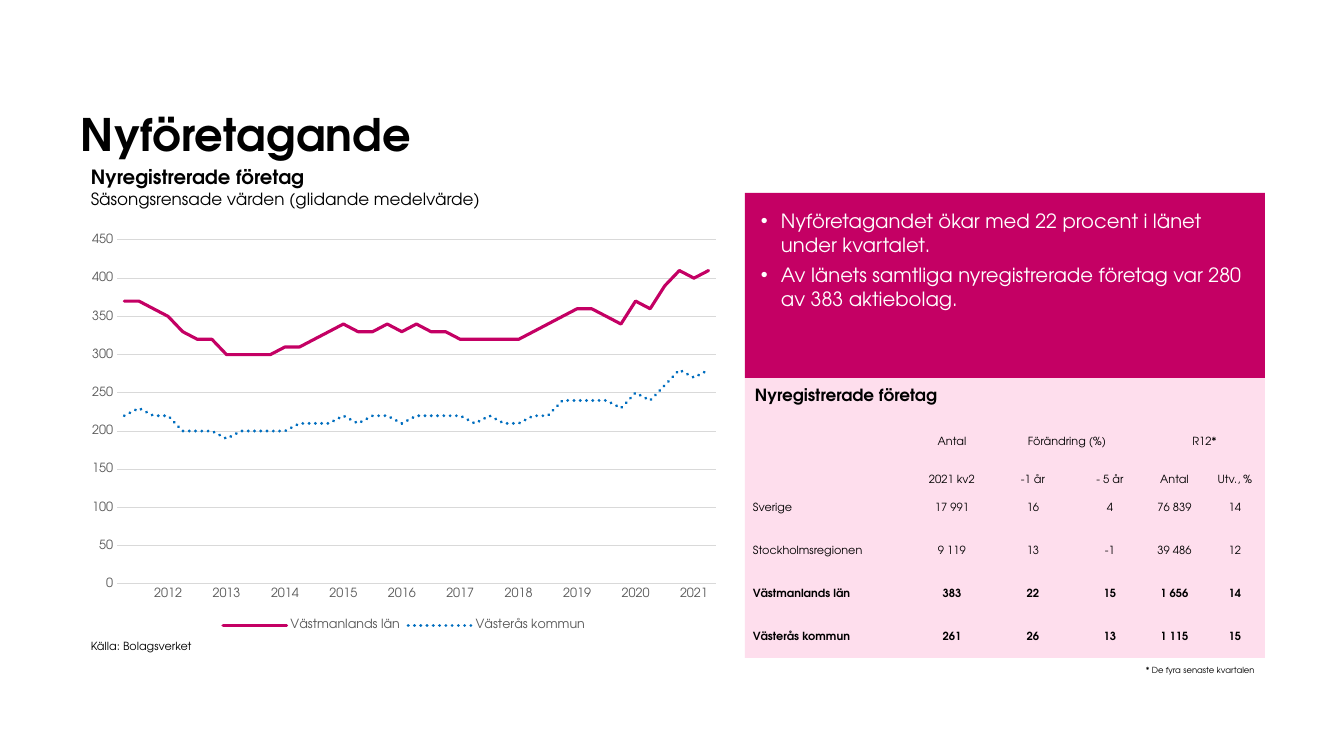
"""Build the slide on new company registrations, with line chart and key figures."""
from dataclasses import dataclass

from lxml import etree
from pptx import Presentation
from pptx import util as u
from pptx.chart.data import CategoryChartData
from pptx.dml.color import RGBColor
from pptx.enum import chart as ch, dml, shapes, text
from pptx.oxml.ns import qn

FONT = "TeX Gyre Adventor"
COLORS = {"black": "000000", "white": "FFFFFF", "magenta": "C40064", "pink": "FEDEED",
          "blue": "006EBF", "grid": "D9D9D9", "label": "595959"}
NO_STYLE = "{2D5ABB26-0587-4C30-8999-92F81FD0307C}"
COLUMNS = (169, 76, 86, 68, 61, 60)
ROWS = (36, 38, 43, 43, 43, 43)
HEADER_ROWS, FIRST_BOLD_ROW = 2, 4
FIGURES = (
    ("", "Antal", "Förändring (%)", "", "R12*", ""),
    ("", "2021 kv2", "-1 år", "- 5 år", "Antal", "Utv., %"),
    ("Sverige", "17 991", "16", "4", "76 839", "14"),
    ("Stockholmsregionen", "9 119", "13", "-1", "39 486", "12"),
    ("Västmanlands län", "383", "22", "15", "1 656", "14"),
    ("Västerås kommun", "261", "26", "13", "1 115", "15"),
)
BULLETS = (("Nyföretagandet ökar med 22 procent i länet under kvartalet.",),
           ("Av länets samtliga nyregistrerade företag var 280", "av 383 aktiebolag."))


@dataclass(frozen=True)
class Box:
    left: int
    top: int
    width: int
    height: int

    def emu(self) -> tuple:
        return tuple(px(n) for n in (self.left, self.top, self.width, self.height))


@dataclass(frozen=True)
class Line:
    wording: str
    size: int
    bold: bool = False


@dataclass(frozen=True)
class Label:
    box: Box
    lines: tuple


@dataclass(frozen=True)
class Area:
    name: str
    color: str
    dash: object
    values: tuple


CHART = Box(79, 226, 650, 409)
PLOT = Box(38, 14, 599, 344)
LABELS = (
    Label(Box(81, 634, 127, 24), (Line("Källa: Bolagsverket", 8),)),
    Label(Box(745, 380, 206, 30), (Line("Nyregistrerade företag", 12, True),)),
    Label(Box(1136, 660, 130, 20), (Line("* De fyra senaste kvartalen", 6),)),
    Label(Box(81, 160, 416, 54), (Line("Nyregistrerade företag", 14, True),
                                  Line("Säsongsrensade värden (glidande medelvärde)", 12))),
)
AREAS = (
    Area("Västmanlands län", "magenta", dml.MSO_LINE.SOLID, (
        370, 370, 360, 350, 330, 320, 320, 300, 300, 300, 300, 310, 310, 320, 330, 340, 330,
        330, 340, 330, 340, 330, 330, 320, 320, 320, 320, 320, 330, 340, 350, 360, 360, 350,
        340, 370, 360, 390, 410, 400, 410)),
    Area("Västerås kommun", "blue", dml.MSO_LINE.ROUND_DOT, (
        220, 230, 220, 220, 200, 200, 200, 190, 200, 200, 200, 200, 210, 210, 210, 220, 210,
        220, 220, 210, 220, 220, 220, 220, 210, 220, 210, 210, 220, 220, 240, 240, 240, 240,
        230, 250, 240, 260, 280, 270, 280)),
)


def px(count: int) -> int:
    return round(count * 914400 / 100.8)


def rgb(name: str) -> RGBColor:
    return RGBColor.from_string(COLORS[name])


def set_font(font, size: int, color: str = "black", bold: bool = False) -> None:
    font.name, font.size, font.bold = FONT, u.Pt(size), bold
    font.color.rgb = rgb(color)


def add_run(paragraph, wording: str, size: int, color: str = "black", bold: bool = False) -> None:
    run = paragraph.add_run()
    run.text = wording
    set_font(run.font, size, color, bold)


def add_label(slide, label: Label) -> None:
    frame = slide.shapes.add_textbox(*label.box.emu()).text_frame
    frame.word_wrap = False
    for i, line in enumerate(label.lines):
        if i:
            frame.paragraphs[0].add_line_break()
        add_run(frame.paragraphs[0], line.wording, line.size, bold=line.bold)


def add_panel(slide, box: Box, color: str):
    panel = slide.shapes.add_shape(shapes.MSO_SHAPE.RECTANGLE, *box.emu())
    panel.shadow.inherit = False
    panel.fill.solid()
    panel.fill.fore_color.rgb = rgb(color)
    panel.line.fill.background()
    return panel


def add_bullets(panel) -> None:
    frame = panel.text_frame
    frame.word_wrap = True
    frame.vertical_anchor = text.MSO_ANCHOR.TOP
    frame.margin_left = frame.margin_right = frame.margin_top = frame.margin_bottom = px(16)
    for i, lines in enumerate(BULLETS):
        paragraph = frame.add_paragraph() if i else frame.paragraphs[0]
        paragraph.alignment = text.PP_ALIGN.LEFT
        if i:
            paragraph.space_before = u.Pt(5)
        props = paragraph._p.get_or_add_pPr()
        props.set("marL", str(px(20)))
        props.set("indent", str(-px(20)))
        etree.SubElement(props, qn("a:buFont")).set("typeface", "Arial")
        etree.SubElement(props, qn("a:buChar")).set("char", "•")
        for j, wording in enumerate(lines):
            if j:
                paragraph.add_line_break()
            add_run(paragraph, wording, 14, "white")


def add_figures(slide, box: Box) -> None:
    table = slide.shapes.add_table(len(ROWS), len(COLUMNS), *box.emu()).table
    table.first_row = table.horz_banding = False
    table._tbl.tblPr.find(qn("a:tableStyleId")).text = NO_STYLE
    for column, width in zip(table.columns, COLUMNS):
        column.width = px(width)
    for row, height in zip(table.rows, ROWS):
        row.height = px(height)
    for r, figures in enumerate(FIGURES):
        for c, figure in enumerate(figures):
            cell = table.cell(r, c)
            cell.fill.background()
            cell.margin_left = px(1 if c else 8)
            cell.margin_right = cell.margin_top = px(1)
            cell.margin_bottom = 0
            header = r < HEADER_ROWS
            cell.vertical_anchor = text.MSO_ANCHOR.BOTTOM if header else text.MSO_ANCHOR.MIDDLE
            paragraph = cell.text_frame.paragraphs[0]
            paragraph.alignment = text.PP_ALIGN.CENTER if c else text.PP_ALIGN.LEFT
            add_run(paragraph, figure, 8, bold=r >= FIRST_BOLD_ROW)
    for c in (2, 4):
        table.cell(0, c).merge(table.cell(0, c + 1))


def set_plot_area(chart) -> None:
    plot_area = chart._chartSpace.chart.plotArea
    for old in plot_area.findall(qn("c:layout")):
        plot_area.remove(old)
    layout = etree.Element(qn("c:layout"))
    manual = etree.SubElement(layout, qn("c:manualLayout"))
    for tag, value in (("layoutTarget", "inner"), ("xMode", "edge"), ("yMode", "edge"),
                       ("x", PLOT.left / CHART.width), ("y", PLOT.top / CHART.height),
                       ("w", PLOT.width / CHART.width), ("h", PLOT.height / CHART.height)):
        etree.SubElement(manual, qn(f"c:{tag}")).set("val", str(value))
    plot_area.insert(0, layout)


def add_registrations(slide) -> None:
    data = CategoryChartData(number_format="0")
    data.categories = [str(2012 + i // 4) if i % 4 == 3 else ""
                       for i in range(len(AREAS[0].values))]
    for area in AREAS:
        data.add_series(area.name, area.values)
    chart = slide.shapes.add_chart(ch.XL_CHART_TYPE.LINE, *CHART.emu(), data).chart
    set_font(chart.font, 10)
    chart.has_title = False
    chart.has_legend = True
    chart.legend.position = ch.XL_LEGEND_POSITION.BOTTOM
    chart.legend.include_in_layout = False
    set_font(chart.legend.font, 9, "label")
    chart.plots[0].vary_by_categories = False
    for series, area in zip(chart.plots[0].series, AREAS):
        series.smooth = False
        series.marker.style = ch.XL_MARKER_STYLE.NONE
        series.format.line.color.rgb = rgb(area.color)
        series.format.line.width = u.Pt(2.25)
        series.format.line.dash_style = area.dash
        series._element.find(qn("c:spPr")).find(qn("a:ln")).set("cap", "rnd")
    years, counts = chart.category_axis, chart.value_axis
    for axis in (years, counts):
        axis.major_tick_mark = axis.minor_tick_mark = ch.XL_TICK_MARK.NONE
        set_font(axis.tick_labels.font, 9, "label")
    counts.minimum_scale, counts.maximum_scale, counts.major_unit = 0, 450, 50
    counts.format.line.fill.background()
    for line in (years.format.line, counts.major_gridlines.format.line):
        line.color.rgb = rgb("grid")
        line.width = u.Pt(0.75)
    skip = etree.Element(qn("c:tickLblSkip"))
    skip.set("val", "1")
    years._element.find(qn("c:noMultiLvlLbl")).addprevious(skip)
    set_plot_area(chart)


def main() -> None:
    deck = Presentation()
    deck.slide_width, deck.slide_height = px(1344), px(756)
    slide = deck.slides.add_slide(deck.slide_layouts[5])
    title = slide.shapes.title
    title.left, title.top, title.width, title.height = Box(81, 38, 929, 123).emu()
    frame = title.text_frame
    frame.margin_left = frame.margin_right = frame.margin_top = frame.margin_bottom = 0
    frame.vertical_anchor = text.MSO_ANCHOR.BOTTOM
    frame.paragraphs[0].alignment = text.PP_ALIGN.LEFT
    add_run(frame.paragraphs[0], "Nyföretagande", 32, bold=True)
    add_panel(slide, Box(745, 378, 520, 280), "pink")
    add_bullets(add_panel(slide, Box(745, 193, 520, 185), "magenta"))
    for label in LABELS:
        add_label(slide, label)
    add_figures(slide, Box(745, 412, 520, sum(ROWS)))
    add_registrations(slide)
    deck.save("out.pptx")


if __name__ == "__main__":
    main()
